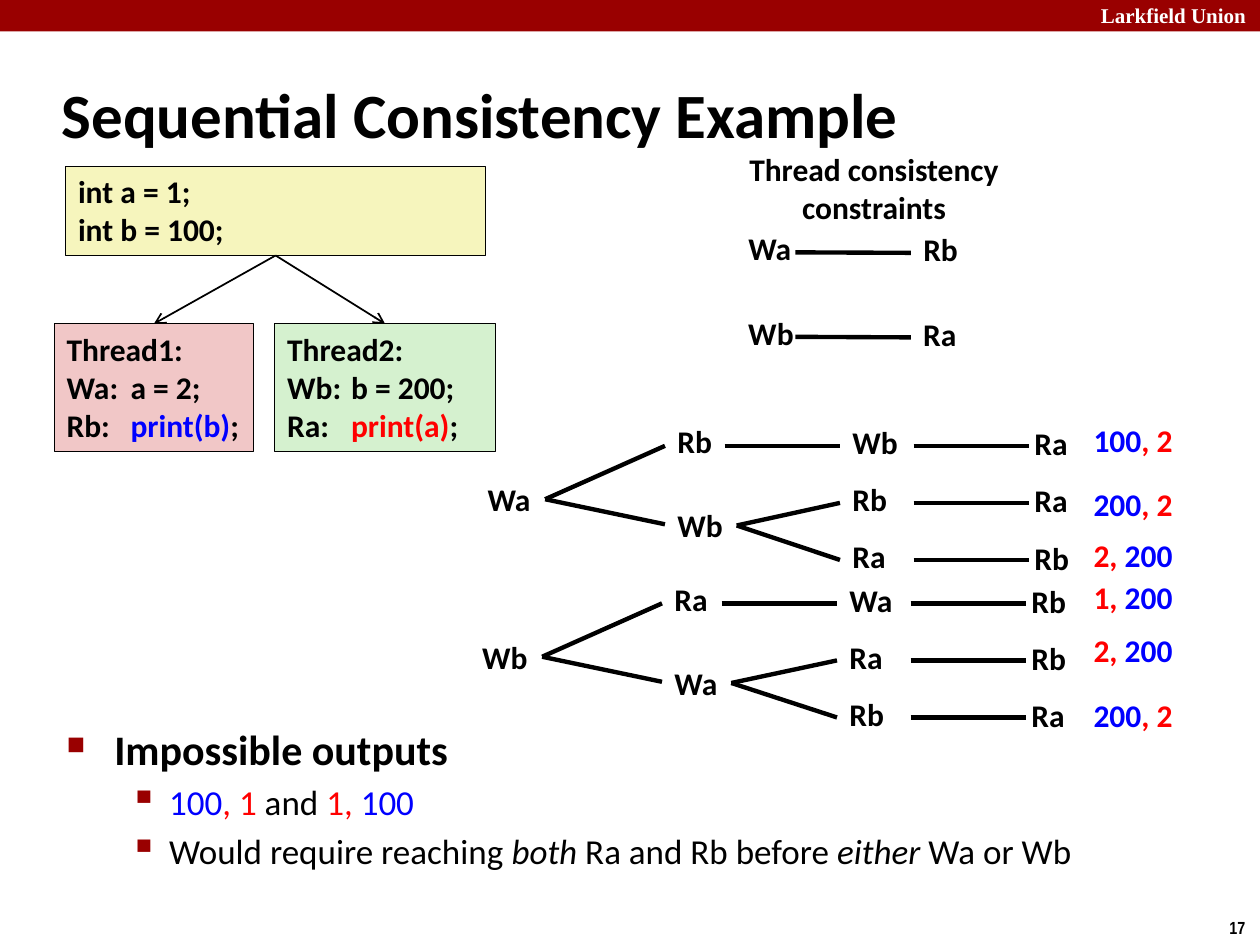
from lxml import etree
from pptx import Presentation
from pptx.dml.color import RGBColor
from pptx.enum.shapes import MSO_CONNECTOR, MSO_SHAPE
from pptx.enum.text import MSO_ANCHOR, MSO_AUTO_SIZE, PP_ALIGN
from pptx.oxml.ns import qn
from pptx.util import Pt

RECTANGLE = MSO_SHAPE.RECTANGLE
STRAIGHT = MSO_CONNECTOR.STRAIGHT
LEFT, CENTER = PP_ALIGN.LEFT, PP_ALIGN.CENTER
TOP, MIDDLE = MSO_ANCHOR.TOP, MSO_ANCHOR.MIDDLE
COLORS = {
    "black": "000000", "white": "FFFFFF", "banner": "990000",
    "blue": "0000FF", "red": "FF0000",
    "yellow_fill": "F6F5BD", "pink_fill": "F1C7C7", "green_fill": "D5F1CF",
}
LABEL_WIDTHS = {"Wa": 39.6, "Wb": 41, "Rb": 34.6, "Ra": 33.8}
LABEL_HEIGHT = 29


def color(name):
    return RGBColor.from_string(COLORS[name])


def add_runs(para, spans, size=18, bold=True, font="Calibri", align=LEFT):
    """Fill a paragraph from (text, colour name, italic) spans; the last two are optional."""
    para.alignment = align
    for text, *style in spans:
        span = para.add_run()
        span.text = text
        span.font.name, span.font.size, span.font.bold = font, Pt(size), bold
        span.font.color.rgb = color(style[0] if style else "black")
        if len(style) > 1:
            span.font.italic = style[1]


def write_lines(frame, lines, **style):
    for index, spans in enumerate(lines):
        para = frame.add_paragraph() if index else frame.paragraphs[0]
        add_runs(para, spans, **style)


def add_text(page, box, lines, wrap=False, **style):
    text_box = page.shapes.add_textbox(*map(Pt, box))
    text_box.text_frame.word_wrap = wrap
    write_lines(text_box.text_frame, lines, **style)
    return text_box


def add_label(page, left, top, word):
    add_text(page, (left, top, LABEL_WIDTHS[word], LABEL_HEIGHT), [[(word,)]])


def add_line(page, start, end, width=2.5):
    line = page.shapes.add_connector(STRAIGHT, *map(Pt, (*start, *end)))
    line.line.color.rgb = color("black")
    line.line.width = Pt(width)
    etree.SubElement(line._element.spPr, qn("a:effectLst"))
    return line


def add_rectangle(page, box, fill, outline=True):
    rectangle = page.shapes.add_shape(RECTANGLE, *map(Pt, box))
    rectangle.shadow.inherit = False
    rectangle.fill.solid()
    rectangle.fill.fore_color.rgb = color(fill)
    if outline:
        rectangle.line.color.rgb = color("black")
        rectangle.line.width = Pt(0.75)
    else:
        rectangle.line.fill.background()
    return rectangle


def add_frame(page, width):
    """Top banner and page number."""
    add_rectangle(page, (0, 0, width, 18), "banner", outline=False)
    add_text(page, (622, -2, 103, 21.6), [[("Larkfield Union", "white")]],
             wrap=True, size=12, font="Times New Roman")
    add_text(page, (695.5, 520.6, 24.5, 19.4), [[("17",)]], size=10, font="Arial Narrow")


def add_title(page, box, text):
    title = page.shapes.title
    title.left, title.top, title.width, title.height = map(Pt, box)
    frame = title.text_frame
    frame.vertical_anchor = MIDDLE
    frame.auto_size = MSO_AUTO_SIZE.NONE
    write_lines(frame, [[(text,)]], size=36)


def add_code_box(page, box, fill, lines):
    code = add_rectangle(page, box, fill)
    frame = code.text_frame
    frame.vertical_anchor = TOP
    write_lines(frame, lines)
    for para in frame.paragraphs:
        tabs = etree.SubElement(para._p.get_or_add_pPr(), qn("a:tabLst"))
        etree.SubElement(tabs, qn("a:tab"), pos=str(Pt(36.5)), algn="l")
    return code


def add_program(page, left, top):
    """Shared data with an arrow down to each thread."""
    shared = add_code_box(page, (left + 6.5, top, 240, 51), "yellow_fill",
                          [[("int a = 1;",)], [("int b = 100;",)]])
    threads = [
        (0, 114, "pink_fill", [[("Thread1:",)], [("Wa:\ta = 2;",)],
                               [("Rb: \t",), ("print(b)", "blue"), (";",)]]),
        (126, 126, "green_fill", [[("Thread2:",)], [("Wb:\tb = 200;",)],
                                  [("Ra:\t",), ("print(a)", "red"), (";",)]]),
    ]
    for offset, width, fill, lines in threads:
        thread = add_code_box(page, (left + offset, top + 90, width, 73), fill, lines)
        arrow = add_line(page, (0, 0), (0, 0), width=1)
        arrow.begin_connect(shared, 2)
        arrow.end_connect(thread, 0)
        etree.SubElement(arrow.line._get_or_add_ln(), qn("a:tailEnd"), type="arrow")


def add_constraints(page, left, top):
    add_text(page, (left, top, 158, 51),
             [[("Thread consistency",)], [("constraints",)]], align=CENTER)
    for row, (first, second) in enumerate((("Wa", "Rb"), ("Wb", "Ra"))):
        row_top = top + 45.5 + 48.3 * row
        add_label(page, left, row_top, first)
        add_label(page, left + 100, row_top + 0.5, second)
        add_line(page, (left + 34, row_top + 16.7), (left + 100, row_top + 17))


def add_tree(page, left, top, root, branches, endings):
    """Interleavings from one first step; the first branch has one path, the second two."""
    pitch = 32.6
    second, third, fourth = left + 108.5, left + 208.5, left + 312.5
    path_y = [top + 16.5 + pitch * row for row in range(3)]
    root_tip = (left + 40, top + 47)
    fork_tip = (second + LABEL_WIDTHS[branches[1]], top + 62)

    add_label(page, left + 39.6 - LABEL_WIDTHS[root], top + pitch, root)
    for word, offset, tip in zip(branches, (-0.7, 47.5), (16.5, 61.3)):
        add_label(page, second, top + offset, word)
        add_line(page, root_tip, (second, top + tip))
    add_line(page, (second + 34, path_y[0]), (third, path_y[0]))
    for y in path_y[1:]:
        add_line(page, fork_tip, (third, y))
    for y, (word, last) in zip(path_y, endings):
        add_label(page, third, y - 16.5, word)
        add_label(page, fourth, y - 15.8, last)
        add_line(page, (left + 250.5, y), (left + 316.7, y))


def add_outputs(page, left, outputs):
    for top, spans in outputs:
        add_text(page, (left, top, 60.5, LABEL_HEIGHT), [spans])


def add_bullets(page, box, items):
    body = add_text(page, box, [], wrap=True)
    levels = [(24, True, 27.2, -27.2, "■", 60), (20, False, 58.5, -22.5, "▪", 110)]
    for index, (level, spans) in enumerate(items):
        size, bold, margin, indent, mark, percent = levels[level]
        frame = body.text_frame
        para = frame.add_paragraph() if index else frame.paragraphs[0]
        para.level = level
        para.space_before = Pt(size * 0.2)
        add_runs(para, spans, size=size, bold=bold)
        props = para._p.get_or_add_pPr()
        props.set("marL", str(Pt(margin)))
        props.set("indent", str(Pt(indent)))
        bullet_color = etree.SubElement(props, qn("a:buClr"))
        etree.SubElement(bullet_color, qn("a:srgbClr"), val=COLORS["banner"])
        etree.SubElement(props, qn("a:buSzPct"), val=str(percent * 1000))
        etree.SubElement(props, qn("a:buChar"), char=mark)


def main():
    deck = Presentation()
    deck.slide_width, deck.slide_height = Pt(720), Pt(540)
    page = deck.slides.add_slide(deck.slide_layouts[5])
    add_frame(page, 720)
    add_title(page, (28, 34.5, 598, 60), "Sequential Consistency Example")
    add_bullets(page, (31, 409.7, 622, 60.5), [
        (0, [("Impossible outputs",)]),
        (1, [("100", "blue"), (", 1 ", "red"), ("and ",), ("1, ", "red"), ("100", "blue")]),
        (1, [("Would require reaching ",), ("both", "black", True),
             (" Ra and Rb before ",), ("either ", "black", True), ("Wa or Wb",)]),
    ])
    add_tree(page, 271.5, 238.3, "Wa", ("Rb", "Wb"),
             (("Wb", "Ra"), ("Rb", "Ra"), ("Ra", "Rb")))
    add_tree(page, 269.8, 328.3, "Wb", ("Ra", "Wa"),
             (("Wa", "Rb"), ("Ra", "Rb"), ("Rb", "Ra")))

    b_200_then_a = [("200", "blue"), (", 2", "red")]
    a_2_then_b = [("2, ", "red"), ("200", "blue")]
    add_outputs(page, 617.8, [
        (237, [("100", "blue"), (", 2", "red")]), (273.6, b_200_then_a), (303, a_2_then_b),
        (327, [("1, ", "red"), ("200", "blue")]), (357, a_2_then_b), (394, b_200_then_a),
    ])
    add_constraints(page, 420.5, 82)
    add_program(page, 31, 95)
    deck.save("out.pptx")


if __name__ == "__main__":
    main()
